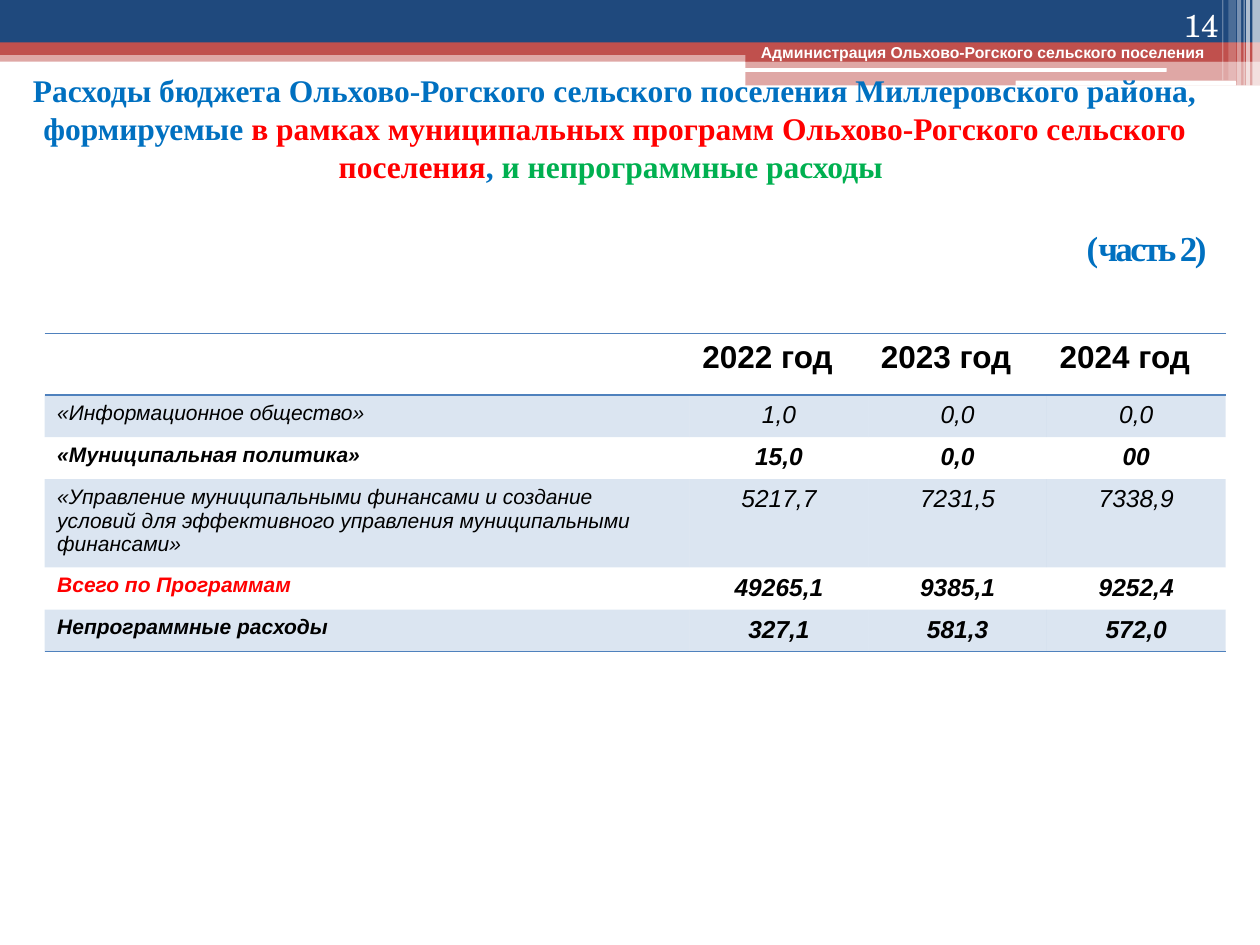
from copy import deepcopy
from lxml.etree import SubElement
from pptx import Presentation
from pptx.dml.color import RGBColor
from pptx.enum.shapes import MSO_SHAPE
from pptx.enum.text import MSO_ANCHOR, MSO_AUTO_SIZE, PP_ALIGN
from pptx.oxml.ns import qn
from pptx.util import Pt

THEME = {
    "navy": "1F497D", "brick": "C0504D", "white": "FFFFFF", "black": "000000",
    "blue": "0070C0", "red": "FF0000", "green": "00B050", "accent": "4F81BD",
    "sans": "Arial", "serif": "Times New Roman", "number": "TeX Gyre Schola",
    "small": 9, "label": 12, "value": 14, "heading": 18, "part": 20,
}

# Content
OWNER = "Администрация Ольхово-Рогского сельского поселения"
PAGE = "14"
BREAK = "\n"
TITLE = [  # text, colour, size, letter spacing
    ("Расходы бюджета Ольхово-Рогского сельского поселения Миллеровского района, формируемые ",
     "blue", "heading", 0),
    ("в рамках муниципальных программ Ольхово-Рогского сельского поселения", "red", "heading", 0),
    (", ", "blue", "heading", 0),
    ("и непрограммные расходы ", "green", "heading", 0),
    BREAK,
    ("\t", "green", "part", 0),
    BREAK,
    ("\t(", "blue", "part", 0),
    ("часть 2)", "blue", "part", -1.5),
]
YEARS = ["", "2022 год", "2023 год", "2024 год"]
ROWS = [  # label, values, bold, label colour, height
    ("«Информационное общество»", ["1,0", "0,0", "0,0"], False, "black", 23),
    ("«Муниципальная политика»", ["15,0", "0,0", "00"], True, "black", 23),
    ("«Управление муниципальными финансами и создание условий для эффективного "
     "управления муниципальными финансами»",
     ["5217,7", "7231,5", "7338,9"], False, "black", 47.5),
    ("Всего по Программам", ["49265,1", "9385,1", "9252,4"], True, "red", 23),
    ("Непрограммные расходы", ["327,1", "581,3", "572,0"], True, "black", 23),
]
HEADER_HEIGHT = 35.3
COLUMN_WIDTHS = [368.6, 102.1, 102.1, 102.1]

# Header decoration: left, top, width, height, colour, opacity in percent
BANDS = [
    (0, 28.8, 720, 6.5, "brick", 50),
    (0, 0, 720, 24.5, "navy", 100),
    (0, 24.2, 720, 7.2, "brick", 100),
    (426, 28, 294, 7.2, "brick", 100),
    (426, 34.8, 294, 14, "brick", 50),
]
PILLS = [
    (425.5, 38.9, 241.2, 2.2, "white", 100),
    (580.3, 46.1, 126, 2.9, "white", 100),
]
STRIPES = [
    (left, 0, width, height, "white", opacity)
    for left, width, height, opacity in [
        (715.7, 4.3, 49, 65), (712.1, 2.2, 49, 65), (710.6, 0.7, 49, 60),
        (707, 2.2, 49, 40), (702, 4.3, 46, 20), (698.4, 0.7, 46, 30),
    ]
]


def colour(name):
    return RGBColor.from_string(THEME[name])


def set_attributes(target, values):
    for name, value in values.items():
        setattr(target, name, value)


def place(shape, left, top, width, height):
    set_attributes(shape, {"left": Pt(left), "top": Pt(top),
                           "width": Pt(width), "height": Pt(height)})


def fill_with(fill, name, opacity, element):
    fill.solid()
    fill.fore_color.rgb = colour(name)
    if opacity < 100:
        value = element.find(qn("a:solidFill")).find(qn("a:srgbClr"))
        SubElement(value, qn("a:alpha"), val=str(opacity * 1000))


def add_run(paragraph, text, font, size, name, bold=True, italic=False):
    run = paragraph.add_run()
    run.text = text
    set_attributes(run.font, {"name": THEME[font], "size": Pt(THEME[size]),
                              "bold": bold, "italic": italic})
    run.font.color.rgb = colour(name)
    return run


def add_bars(slide, kind, bars):
    for left, top, width, height, name, opacity in bars:
        shape = slide.shapes.add_shape(kind, Pt(left), Pt(top), Pt(width), Pt(height))
        shape.shadow.inherit = False
        shape.line.fill.background()
        fill_with(shape.fill, name, opacity, shape._element.spPr)


def add_label(slide, box, text, font, size, bold, alignment, anchor):
    shape = slide.shapes.add_textbox(*map(Pt, box))
    set_attributes(shape.text_frame, {"word_wrap": True, "vertical_anchor": anchor})
    paragraph = shape.text_frame.paragraphs[0]
    paragraph.alignment = alignment
    add_run(paragraph, text, font, size, "white", bold)


def format_title(slide):
    title = slide.shapes.title
    place(title, 0, 49, 702.7, 96.5)
    slide.shapes._spTree.append(title._element)  # in front of the bands
    set_attributes(title.text_frame, {"word_wrap": True, "auto_size": MSO_AUTO_SIZE.NONE,
                                      "vertical_anchor": MSO_ANCHOR.MIDDLE})
    paragraph = title.text_frame.paragraphs[0]
    paragraph.alignment = PP_ALIGN.CENTER
    tabs = SubElement(paragraph._p.get_or_add_pPr(), qn("a:tabLst"))
    SubElement(tabs, qn("a:tab"), pos=str(Pt(607.7)), algn="l")
    for part in TITLE:
        if part == BREAK:
            paragraph.add_line_break()
            paragraph._p[-1].append(deepcopy(run._r.rPr))  # keeps the line height
            continue
        text, name, size, spacing = part
        run = add_run(paragraph, text, "serif", size, name)
        if spacing:
            run._r.rPr.set("spc", str(int(spacing * 100)))


def add_borders(cell, sides):
    properties = cell._tc.get_or_add_tcPr()
    for index, side in enumerate(sides):
        line = SubElement(properties, qn(f"a:{side}"), w=str(Pt(1)))
        fill = SubElement(line, qn("a:solidFill"))
        SubElement(fill, qn("a:srgbClr"), val=THEME["accent"])
        properties.insert(index, line)


def add_spending_table(slide):
    heights = [HEADER_HEIGHT] + [row[-1] for row in ROWS]
    frame = slide.shapes.add_table(len(heights), len(YEARS), Pt(25.5), Pt(190.5),
                                   Pt(sum(COLUMN_WIDTHS)), Pt(sum(heights)))
    table = frame.table
    # The "no style, no grid" table style
    table._tbl.tblPr.find(qn("a:tableStyleId")).text = "{2D5ABB26-0587-4C30-8999-92F81FD0307C}"
    for column, width in zip(table.columns, COLUMN_WIDTHS):
        column.width = Pt(width)
    for row, height in zip(table.rows, heights):
        row.height = Pt(height)

    for column, year in enumerate(YEARS):
        cell = table.cell(0, column)
        cell.fill.background()
        if year:
            add_run(cell.text_frame.paragraphs[0], year, "sans", "heading", "black")
        add_borders(cell, ["lnT", "lnB"])

    for index, (label, values, bold, name, _) in enumerate(ROWS, start=1):
        for column, text in enumerate([label] + values):
            cell = table.cell(index, column)
            paragraph = cell.text_frame.paragraphs[0]
            if column:
                paragraph.alignment = PP_ALIGN.CENTER
                add_run(paragraph, text, "sans", "value", "black", bold, True)
            else:
                add_run(paragraph, text, "sans", "label", name, bold, True)
            if index % 2:
                fill_with(cell.fill, "accent", 20, cell._tc.tcPr)
            else:
                cell.fill.background()
            if index == len(ROWS):
                add_borders(cell, ["lnB"])


def main():
    presentation = Presentation()
    set_attributes(presentation, {"slide_width": Pt(720), "slide_height": Pt(540)})
    slide = presentation.slides.add_slide(presentation.slide_layouts[5])
    add_bars(slide, MSO_SHAPE.RECTANGLE, BANDS)
    add_bars(slide, MSO_SHAPE.ROUNDED_RECTANGLE, PILLS)
    add_bars(slide, MSO_SHAPE.RECTANGLE, STRIPES)
    add_label(slide, (427.7, 20.9, 272.2, 18), OWNER, "sans", "small", True,
              PP_ALIGN.LEFT, MSO_ANCHOR.TOP)
    format_title(slide)
    add_label(slide, (643.7, 0, 59.8, 28.8), PAGE, "number", "heading", False,
              PP_ALIGN.RIGHT, MSO_ANCHOR.BOTTOM)
    add_spending_table(slide)
    presentation.save("out.pptx")


if __name__ == "__main__":
    main()
